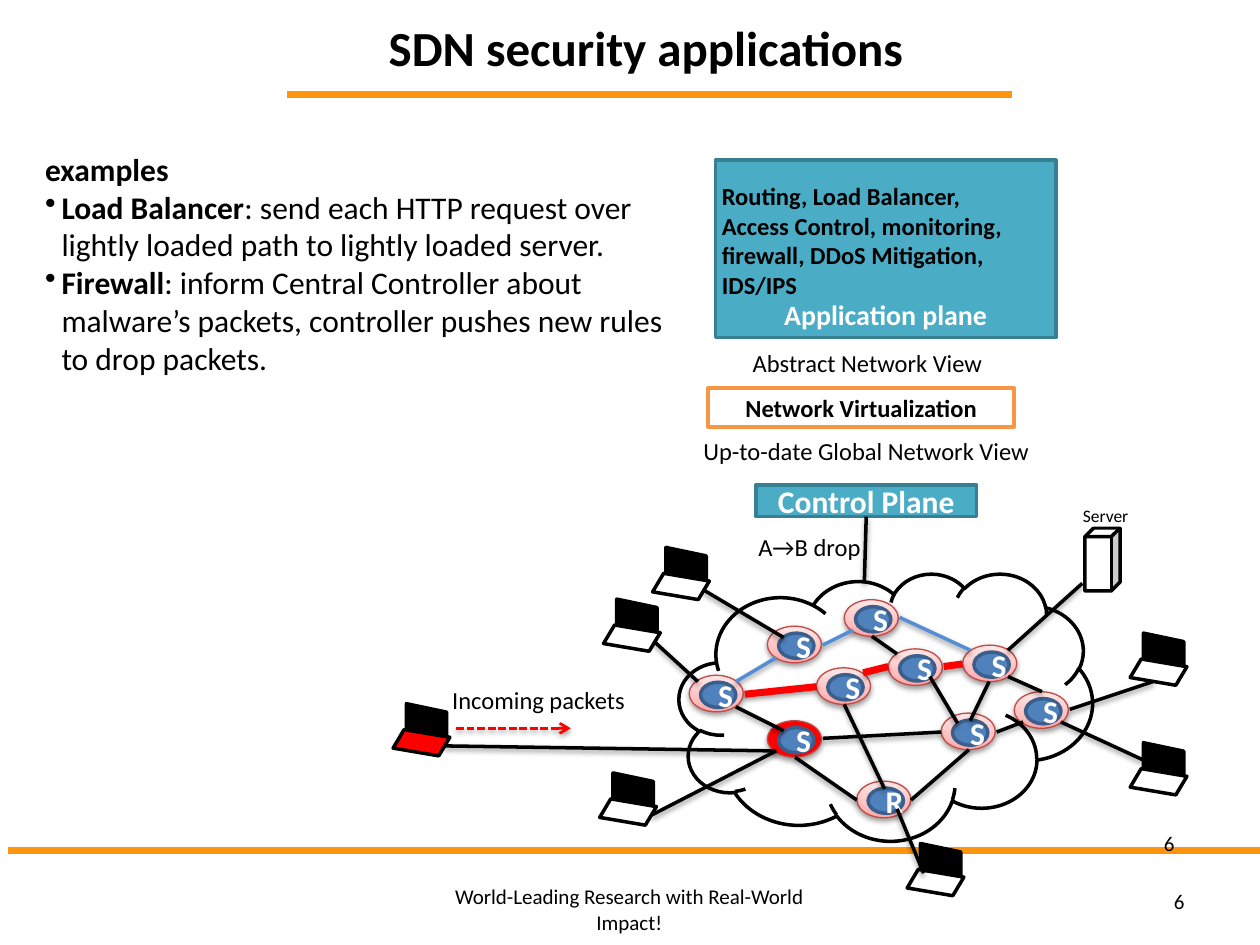
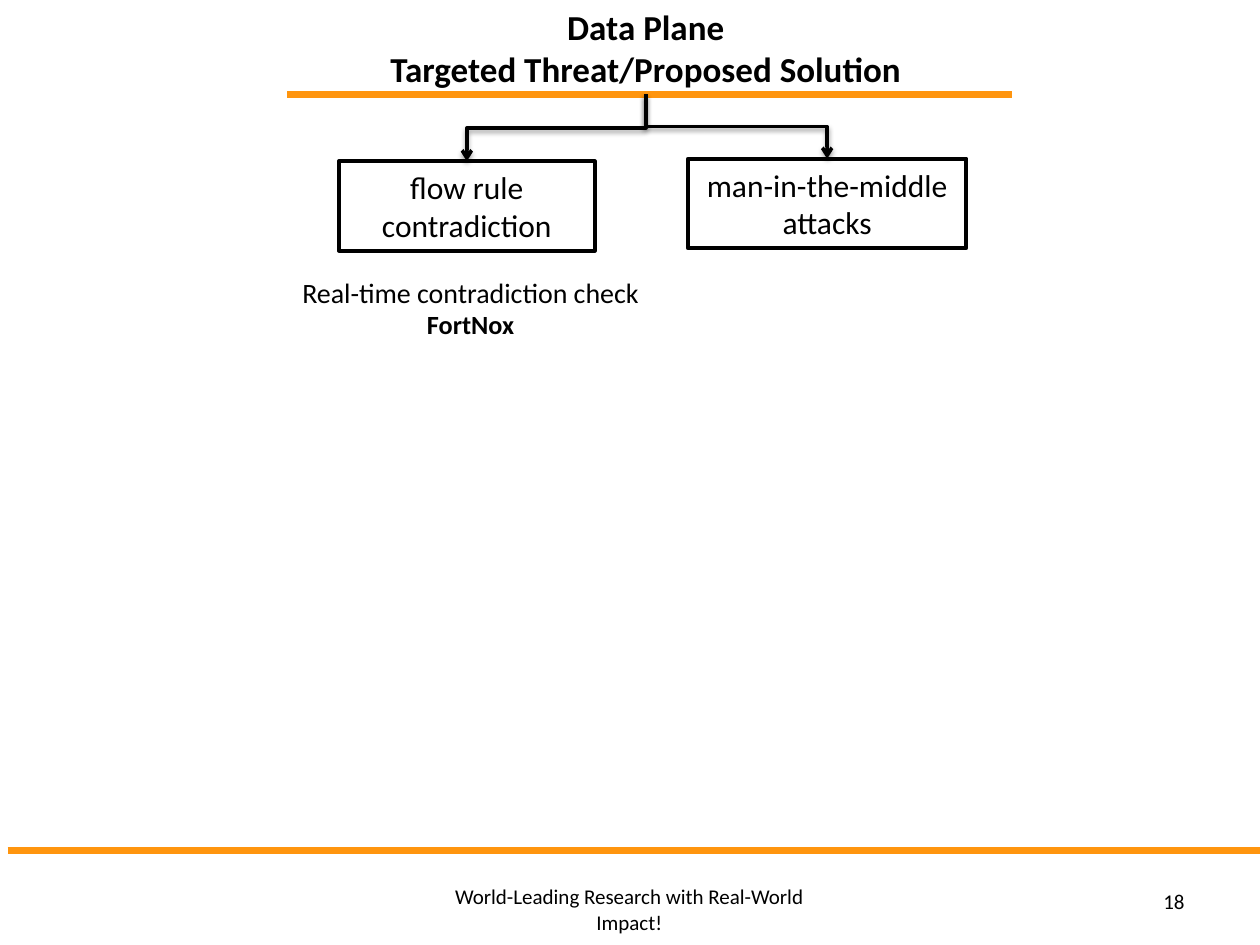
from pptx import Presentation
from pptx.dml.color import RGBColor
from pptx.enum.dml import MSO_LINE as Dash
from pptx.enum.shapes import MSO_CONNECTOR as Link, MSO_SHAPE as Shape
from pptx.enum.text import MSO_ANCHOR as Anchor, PP_ALIGN as Align
from pptx.oxml import parse_xml
from pptx.oxml.ns import nsdecls, qn
from pptx.util import Inches, Pt

BLACK = RGBColor(0x00, 0x00, 0x00)
WHITE = RGBColor(0xFF, 0xFF, 0xFF)
RED = RGBColor(0xFF, 0x00, 0x00)
AMBER = RGBColor(0xFF, 0x95, 0x0E)
PEACH = RGBColor(0xF7, 0x96, 0x46)
TEAL = RGBColor(0x4B, 0xAC, 0xC6)
PINE = RGBColor(0x37, 0x7F, 0x92)
BLUE = RGBColor(0x4F, 0x81, 0xBD)
NAVY = RGBColor(0x3A, 0x5F, 0x8C)
SKY = RGBColor(0x55, 0x8E, 0xD5)
ROSE = RGBColor(0xBF, 0x4C, 0x48)

FONT = "Calibri"
NS = nsdecls("a")
SHADE = (f'<a:outerShdw {NS} blurRad="39370" dist="20320" dir="5400000" rotWithShape="0">'
         '<a:srgbClr val="000000"><a:alpha val="38000"/></a:srgbClr></a:outerShdw>')
STOPS = "".join(f'<a:gs pos="{pos}000"><a:srgbClr val="{tint}"/></a:gs>'
                for pos, tint in ((0, "FFA6A5"), (35, "FFC0BF"), (100, "FFE7E7")))
BLUSH = (f'<a:gradFill {NS} rotWithShape="1"><a:gsLst>{STOPS}</a:gsLst>'
         '<a:lin ang="16200000" scaled="0"/></a:gradFill>')

# The grid has 100 columns and 75 rows of square cells
deck = Presentation()
deck.slide_width, deck.slide_height = Inches(10), Inches(7.5)
CELL = deck.slide_width / 100


def put(slide, kind, at, paras=(), fill=None, edge=None, width=2, size=14,
        ink=BLACK, bold=False, align=Align.CENTER, anchor=Anchor.MIDDLE, inset=None):
    """Place a shape, or a text box if kind is None; a paragraph is text or (text, bold) runs."""
    spot = [int(v * CELL) for v in at]
    if kind is None:
        item = slide.shapes.add_textbox(*spot)
    else:
        item = slide.shapes.add_shape(kind, *spot)
        item.shadow.inherit = False
    if fill is None:
        item.fill.background()
    else:
        item.fill.solid()
        item.fill.fore_color.rgb = fill
    if edge is None:
        item.line.fill.background()
    else:
        item.line.color.rgb = edge
        item.line.width = Pt(width)
    frame = item.text_frame
    frame.word_wrap = True
    frame.vertical_anchor = anchor
    if inset is not None:
        frame.margin_left = frame.margin_right = inset
        frame.margin_top = frame.margin_bottom = inset
    for i, para in enumerate(paras):
        line = frame.paragraphs[0] if i == 0 else frame.add_paragraph()
        line.alignment = align
        for text, heavy in [(para, bold)] if isinstance(para, str) else para:
            run = line.add_run()
            run.text = text
            run.font.name, run.font.size = FONT, Pt(size)
            run.font.bold, run.font.color.rgb = heavy, ink
    return item


def join(slide, ends, ink=BLACK, width=2, kind=Link.STRAIGHT, shade=True, arrow=False):
    wire = slide.shapes.add_connector(kind, *[int(v * CELL) for v in ends])
    wire.line.color.rgb = ink
    wire.line.width = Pt(width)
    if arrow:
        wire.line._get_or_add_ln().append(parse_xml(f'<a:tailEnd {NS} type="arrow"/>'))
    glow = parse_xml(f"<a:effectLst {NS}/>")
    if shade:
        glow.append(parse_xml(SHADE))
    wire.element.spPr.append(glow)
    return wire


# Bands, title, footer and number of both slides
pages = []
for lines, size, page in ((["SDN security applications"], 28, "6"),
                          (["Data Plane", "Targeted Threat/Proposed Solution"], 20, "18")):
    slide = deck.slides.add_slide(deck.slide_layouts[6])
    join(slide, (22.8, 7.5, 80.3, 7.5), AMBER, 4.31, shade=False)
    join(slide, (0.6, 67.5, 100, 67.5), AMBER, 4.31, shade=False)
    put(slide, None, (32.5, 69.3, 34.9, 5.7),
        ["World-Leading Research with Real-World Impact!"], size=12)
    put(slide, None, (17.5, 0, 67.5, 7.5), lines, size=size, bold=True)
    put(slide, None, (71.7, 69.5, 23.3, 4), [page], size=12, align=Align.RIGHT)
    pages.append(slide)
apps, threats = pages

# Slide 1: planes
plane = put(apps, Shape.RECTANGLE, (60, 38.5, 17.5, 2.5), ["Control Plane"],
            TEAL, PINE, size=18, ink=WHITE, bold=True)
put(apps, Shape.RECTANGLE, (56.8, 12.7, 27, 14.1), ["Application plane"],
    TEAL, PINE, size=16, ink=WHITE, bold=True, anchor=Anchor.BOTTOM)
put(apps, None, (56.3, 13.9, 28.9, 10.4),
    ["Routing, Load Balancer,",
     "Access Control, monitoring, firewall, DDoS Mitigation, IDS/IPS"],
    bold=True, align=Align.LEFT, anchor=Anchor.TOP)
notes = put(apps, None, (2.6, 11.4, 51.1, 25.2), [
    [("examples", True)],
    [("Load Balancer", True),
     (": send each HTTP request over lightly loaded path to lightly loaded server.", False)],
    [("Firewall", True),
     (": inform Central Controller about malware’s packets, "
      "controller pushes new rules to drop packets.", False)],
], size=18, align=Align.LEFT, anchor=Anchor.TOP)
for para in notes.text_frame.paragraphs[1:]:
    props = para._p.get_or_add_pPr()
    props.set("marL", str(Inches(0.13)))
    props.set("indent", str(-Inches(0.13)))
    props.append(parse_xml(f'<a:buChar {NS} char="•"/>'))

# Slide 1: switches and router
for x, y, name in ((60.9, 57.2, "S"), (74.7, 56.6, "S"), (68, 62, "R"), (70.5, 51.5, "S"),
                   (76.4, 51.2, "S"), (80.5, 54.9, "S"), (64.8, 53, "S"), (60.9, 49.7, "S"),
                   (54.7, 53.6, "S"), (67, 47.6, "S")):
    hit = (x, y) == (60.9, 57.2)
    ring = put(apps, Shape.OVAL, (x, y, 4.3, 2.9), fill=RED if hit else None,
               edge=ROSE, width=0.75)
    props = ring.element.spPr
    if not hit:
        props.replace(props.find(qn("a:noFill")), parse_xml(BLUSH))
    props.find(qn("a:effectLst")).append(parse_xml(SHADE))
    put(apps, Shape.OVAL, (x + 0.9, y + 0.55, 2.8, 2), [name], BLUE, NAVY,
        size=18, ink=WHITE, bold=True)

# Slide 1: links inside the cloud
wires = {
    (BLACK, 2): ((70.2, 62.6, 67, 55.9), (76.9, 59.5, 72.3, 63.5), (63.1, 60.1, 68, 63.5),
                 (81.2, 57.3, 79.1, 58.1), (69.2, 50.5, 71.2, 51.9), (73.8, 53.7, 76, 57.4),
                 (62.2, 58, 58.4, 56.1), (65.3, 58.6, 74.7, 58.1), (80, 53.7, 82.7, 54.9),
                 (78.5, 54.1, 77, 57.2)),
    (SKY, 2): ((71.4, 49, 77, 51.6), (67.7, 50, 65.3, 51.2), (58.4, 54.1, 61.6, 52.2)),
    (RED, 4): ((70.5, 52.9, 68.5, 53.4), (59.1, 55.1, 64.8, 54.5), (74.9, 52.9, 76.4, 52.7)),
}
for (ink, width), group in wires.items():
    for ends in group:
        join(apps, ends, ink, width)

put(apps, Shape.CLOUD, (53.9, 45.5, 32.8, 21.2), edge=BLACK)
put(apps, None, (59.2, 41.7, 11, 3.4), ["A→B drop"], align=Align.LEFT)
put(apps, Shape.RECTANGLE, (56.2, 30.8, 24.3, 3.1), ["Network Virtualization"],
    WHITE, PEACH, bold=True)
put(apps, None, (54.7, 34.1, 28.1, 3.4), ["Up-to-date Global Network View"])
put(apps, None, (58.3, 27.1, 21.1, 3.4), ["Abstract Network View"])

# Slide 1: laptops, each a screen over a keyboard, and their links
for x, y, keys in ((91, 50, WHITE), (91, 58.7, WHITE), (32.5, 55.6, RED), (49.2, 47.3, WHITE),
                   (53.1, 43.2, WHITE), (73.3, 66.7, WHITE), (48.9, 61.1, WHITE)):
    screen = put(apps, Shape.PARALLELOGRAM, (x, y, 2.7, 3.2), fill=BLACK, edge=BLACK)
    screen.rotation, screen.adjustments[0] = 90, 0.25
    board = put(apps, Shape.PARALLELOGRAM, (x - 1.2, y + 2.55, 4.3, 1.6), fill=keys, edge=BLACK)
    board.rotation, board.adjustments[0] = 9.6, 0.39
for ends in ((84.9, 56.3, 91.5, 54.1), (80, 51.6, 85.9, 46.3), (55.4, 54.1, 51.9, 50.9),
             (61.6, 59.6, 35.2, 59.2), (84.2, 57.3, 90.7, 60.3), (71.2, 64.2, 73.3, 69.3),
             (62.2, 50.6, 55.8, 46.8), (61.6, 59.6, 51.7, 64.7)):
    join(apps, ends)
join(apps, (68.75, 41, 68.6, 46.2)).begin_connect(plane, 2)

put(apps, None, (34.9, 53.8, 18, 3.4), ["Incoming packets"], align=Align.LEFT)
flow = join(apps, (36.2, 57.8, 45.3, 57.8), RED, 1.5, arrow=True)
flow.line.dash_style = Dash.SQUARE_DOT
put(apps, None, (70.9, 64.9, 23.3, 4), ["6"], size=12, align=Align.RIGHT)
put(apps, Shape.CUBE, (86.1, 41.9, 2.8, 5), fill=WHITE, edge=BLACK)
put(apps, Shape.RECTANGLE, (85.3, 40.1, 4.9, 1.7), ["Server"], WHITE, size=10, inset=0)

# Slide 2: threats below the title, each reached by a bent arrow
put(threats, None, (22, 21.4, 30.7, 3.4), ["Real-time contradiction check"],
    size=16, anchor=Anchor.TOP)
put(threats, None, (22, 24, 30.7, 3.4), ["FortNox"], size=15, bold=True, anchor=Anchor.TOP)
stem, base = 51.25, 7.5
for left, top, wide, text, side in ((54.6, 12.6, 22.1, "man-in-the-middle attacks", 1),
                                    (26.9, 12.8, 20.3, "flow rule contradiction", -1)):
    put(threats, Shape.RECTANGLE, (left, top, wide, 7.1), [text],
        edge=BLACK, width=2.25, size=18)
    tip = left + wide / 2
    mid, level = (stem + tip) / 2, (base + top) / 2
    drop, span = side * (top - base) / 2, abs(tip - stem) / 2
    bend = join(threats, (mid + drop, level - span, mid - drop, level + span),
                kind=Link.ELBOW, arrow=True)
    bend.element.spPr.find(qn("a:xfrm")).set("rot", str(-side * 90 % 360 * 60000))

deck.save("out.pptx")
